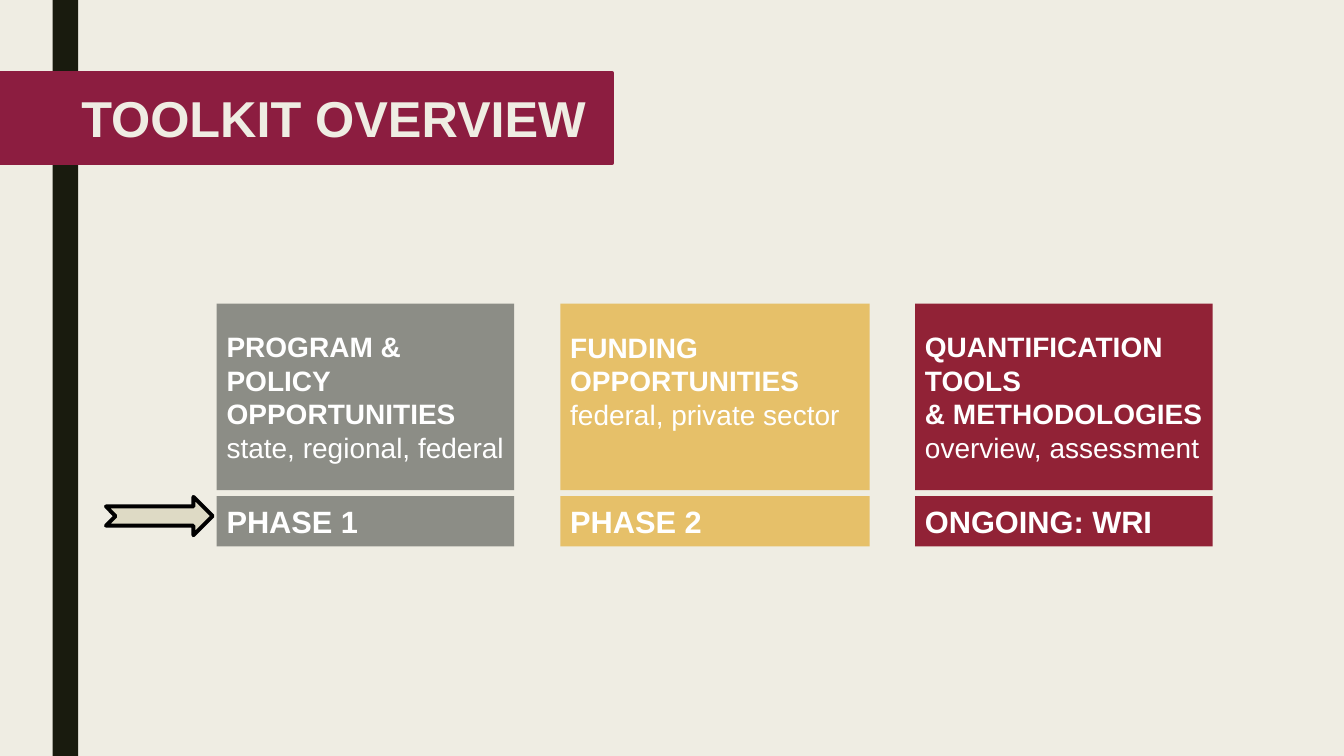
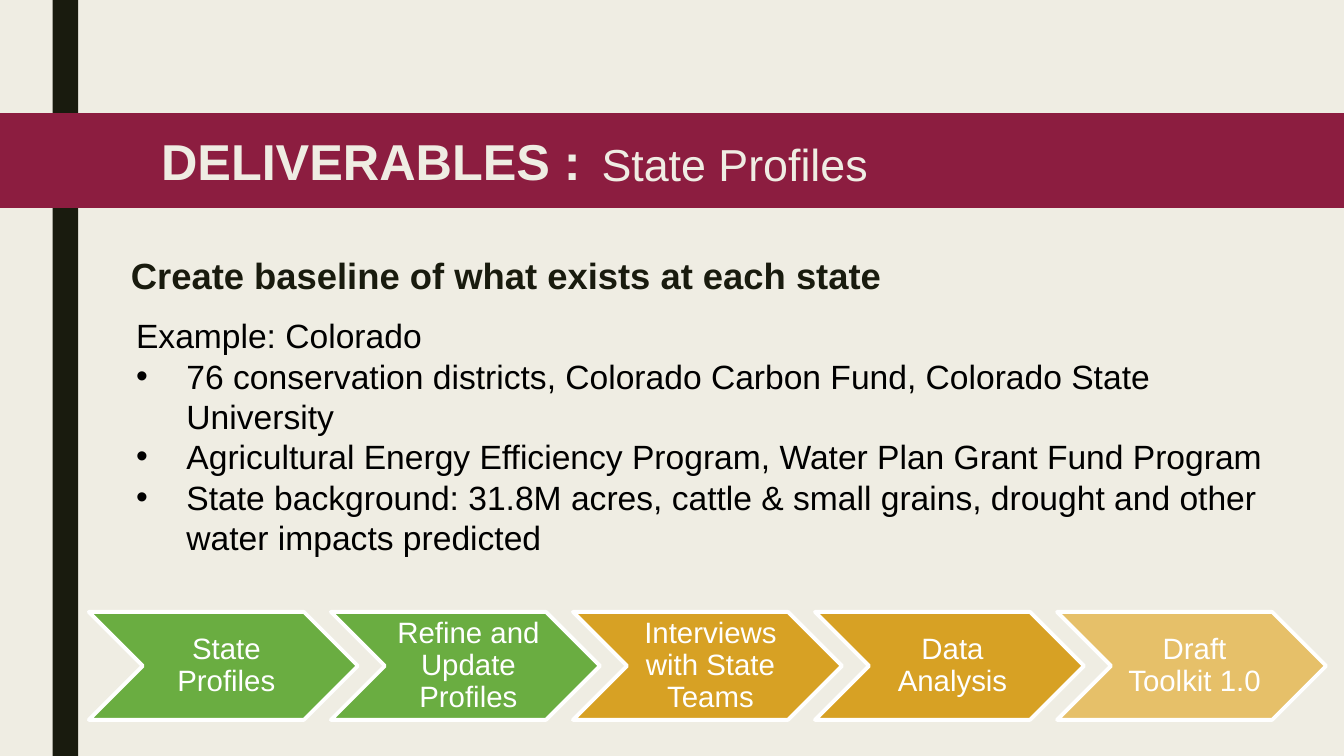
"""Build the toolkit overview and the state profiles deliverable slides."""
from lxml import etree
from pptx import Presentation
from pptx import util as u
from pptx.dml.color import RGBColor
from pptx.enum import shapes, text
from pptx.oxml import ns

CREAM = RGBColor(0xEF, 0xED, 0xE3)
INK = RGBColor(0x19, 0x1B, 0x0E)
MAROON = RGBColor(0x8C, 0x1D, 0x40)
CRIMSON = RGBColor(0x91, 0x22, 0x36)
GREY = RGBColor(0x8C, 0x8D, 0x86)
SAND = RGBColor(0xE6, 0xC0, 0x69)
OCHRE = RGBColor(0xD7, 0xA1, 0x24)
GREEN = RGBColor(0x6A, 0xAD, 0x41)
STONE = RGBColor(0xDE, 0xDA, 0xC5)
WHITE = RGBColor(0xFF, 0xFF, 0xFF)
BLACK = RGBColor(0, 0, 0)
FONT = "Arial"
SLIDE_WIDTH, SLIDE_HEIGHT = 33.87, 19.05
KIND = shapes.MSO_SHAPE


def add_block(slide, kind, left, top, width, height, fill, line=None):
    """Add a flat filled shape, measured in centimetres."""
    shape = slide.shapes.add_shape(kind, u.Cm(left), u.Cm(top), u.Cm(width), u.Cm(height))
    shape.shadow.inherit = False
    shape.fill.solid()
    shape.fill.fore_color.rgb = fill
    if line is None:
        shape.line.fill.background()
    else:
        shape.line.color.rgb = line
        shape.line.width = u.Pt(2.75)
    return shape


def write(shape, wording, size, color=WHITE, bold=False, align=text.PP_ALIGN.LEFT,
          spacing=None, bullet=False):
    """Add one formatted paragraph to a shape or text box."""
    frame = shape.text_frame
    frame.word_wrap = True
    paragraph = frame.add_paragraph() if frame.text else frame.paragraphs[0]
    paragraph.text = wording
    paragraph.alignment = align
    if spacing:
        paragraph.line_spacing = spacing
    if bullet:
        properties = paragraph._p.get_or_add_pPr()
        properties.set("marL", str(u.Cm(1.27)))
        properties.set("indent", str(u.Cm(-1.27)))
        etree.SubElement(properties, ns.qn("a:buFont")).set("typeface", FONT)
        etree.SubElement(properties, ns.qn("a:buChar")).set("char", "•")
    paragraph.font.name = FONT
    paragraph.font.size = u.Pt(size)
    paragraph.font.bold = bold
    paragraph.font.color.rgb = color


presentation = Presentation()
presentation.slide_width = u.Cm(SLIDE_WIDTH)
presentation.slide_height = u.Cm(SLIDE_HEIGHT)
background = presentation.slide_master.background.fill
background.solid()
background.fore_color.rgb = CREAM
layout = presentation.slide_layouts[6]
for placeholder in list(layout.placeholders):
    layout.shapes.element.remove(placeholder.element)
overview = presentation.slides.add_slide(layout)
deliverables = presentation.slides.add_slide(layout)
stripe = add_block(overview, KIND.RECTANGLE, 1.33, 0, 0.64, SLIDE_HEIGHT, INK)
layout.shapes.element.append(stripe.element)

for slide, band_top, band_width, title_left, title_width, title in (
    (overview, 1.83, 15.42, 1.8, 15.04, "TOOLKIT OVERVIEW"),
    (deliverables, 2.9, SLIDE_WIDTH, 3.81, 12.32, "DELIVERABLES :"),
):
    add_block(slide, KIND.RECTANGLE, 0, band_top, band_width, 2.29, MAROON, MAROON)
    title_box = slide.shapes.add_textbox(
        u.Cm(title_left), u.Cm(band_top + 0.25), u.Cm(title_width), u.Cm(1.8))
    write(title_box, title, 36, CREAM, bold=True)

for left, width, fill, headings, detail, phase, bottom_margin in (
    (5.46, 7.5, GREY, ["PROGRAM & POLICY OPPORTUNITIES"],
     "state, regional, federal", "PHASE 1", 0.13),
    (14.12, 7.8, SAND, ["FUNDING OPPORTUNITIES"],
     "federal, private sector", "PHASE 2", 0.94),
    (23.06, 7.5, CRIMSON, ["QUANTIFICATION TOOLS", "& METHODOLOGIES"],
     "overview, assessment", "ONGOING: WRI", 0.13),
):
    card = add_block(overview, KIND.RECTANGLE, left, 7.65, width, 4.7, fill)
    card.text_frame.margin_bottom = u.Cm(bottom_margin)
    for heading in headings:
        write(card, heading, 20, bold=True)
    write(card, detail, 20)
    phase_bar = add_block(overview, KIND.RECTANGLE, left, 12.5, width, 1.27, fill)
    write(phase_bar, phase, 22, bold=True)

add_block(overview, KIND.NOTCHED_RIGHT_ARROW, 2.67, 12.52, 2.69, 0.97, STONE, BLACK)

subtitle_box = deliverables.shapes.add_textbox(u.Cm(14.91), u.Cm(3.48), u.Cm(13.9), u.Cm(1.83))
write(subtitle_box, "State Profiles", 32, CREAM, spacing=0.89)

heading_box = deliverables.shapes.add_textbox(u.Cm(3.05), u.Cm(6.35), u.Cm(20.57), u.Cm(1.83))
write(heading_box, "Create baseline of what exists at each state", 26, INK, bold=True,
      spacing=0.94)

example_box = deliverables.shapes.add_textbox(u.Cm(3.18), u.Cm(7.82), u.Cm(29.54), u.Cm(6.4))
write(example_box, "Example: Colorado", 24, BLACK)
for point in (
    "76 conservation districts, Colorado Carbon Fund, Colorado State University",
    "Agricultural Energy Efficiency Program, Water Plan Grant Fund Program",
    "State background: 31.8M acres, cattle & small grains, drought and other "
    "water impacts predicted",
):
    write(example_box, point, 24, BLACK, bullet=True)

for index, (step, fill) in enumerate((
    ("State Profiles", GREEN),
    ("Refine and Update Profiles", GREEN),
    ("Interviews with State Teams", OCHRE),
    ("Data Analysis", OCHRE),
    ("Draft Toolkit 1.0", SAND),
)):
    chevron = add_block(deliverables, KIND.CHEVRON, 2.24 + 6.1 * index, 15.42, 6.78, 2.72,
                        fill, WHITE)
    frame = chevron.text_frame
    frame.margin_left = u.Cm(0.23)
    frame.margin_top = frame.margin_right = frame.margin_bottom = u.Cm(0.08)
    write(chevron, step, 21, align=text.PP_ALIGN.CENTER, spacing=0.9)

presentation.save("out.pptx")
